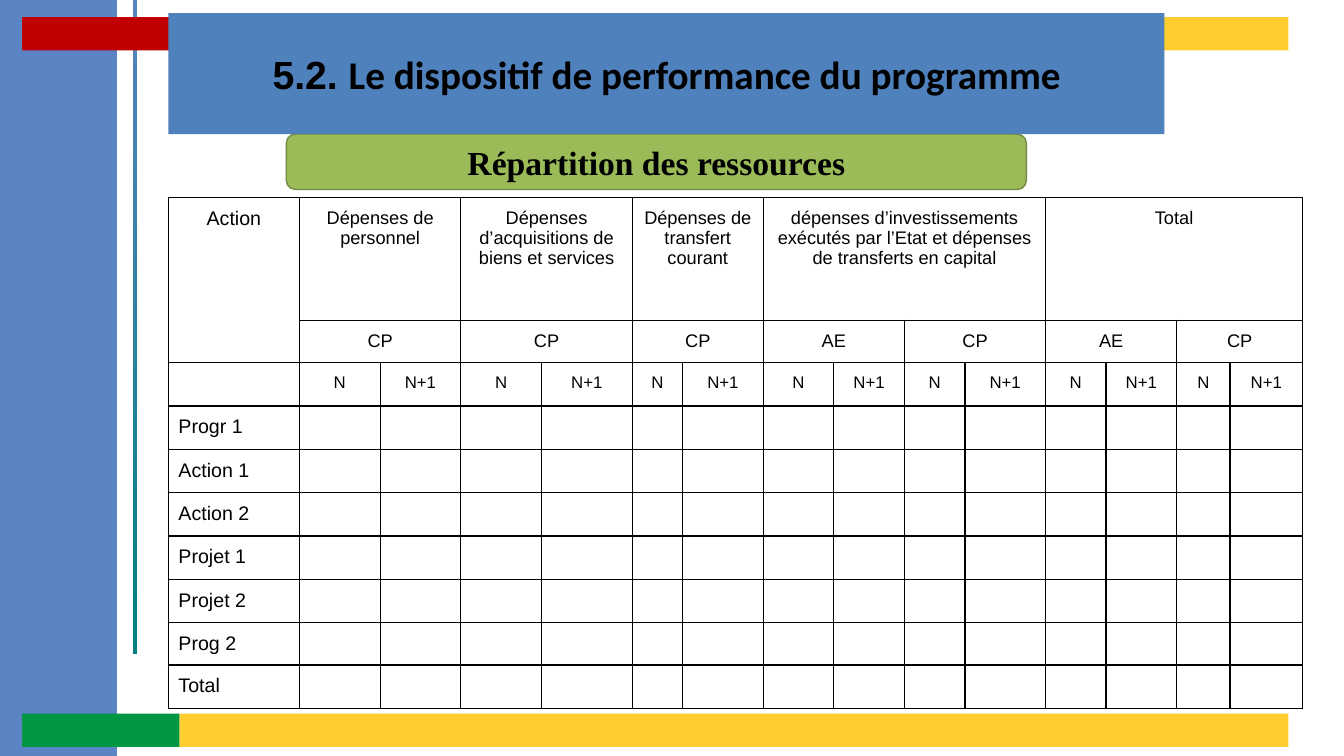
from lxml import etree
from pptx import Presentation
from pptx.dml.color import RGBColor
from pptx.enum.shapes import MSO_SHAPE
from pptx.enum.text import MSO_ANCHOR, PP_ALIGN
from pptx.oxml.ns import qn
from pptx.util import Inches, Pt

RECT, ROUNDED = MSO_SHAPE.RECTANGLE, MSO_SHAPE.ROUNDED_RECTANGLE
MIDDLE, TOP = MSO_ANCHOR.MIDDLE, MSO_ANCHOR.TOP
CENTER, LEFT = PP_ALIGN.CENTER, PP_ALIGN.LEFT

BLACK = RGBColor(0x00, 0x00, 0x00)
WHITE = RGBColor(0xFF, 0xFF, 0xFF)
SIDE_BLUE = RGBColor(0x5A, 0x84, 0xC3)
TITLE_BLUE = RGBColor(0x4F, 0x81, 0xBD)
TEAL = RGBColor(0x00, 0x80, 0x80)
YELLOW = RGBColor(0xFF, 0xCD, 0x2F)
GREEN = RGBColor(0x00, 0x96, 0x44)
RED = RGBColor(0xC0, 0x00, 0x00)
OLIVE = RGBColor(0x9B, 0xBB, 0x59)
OLIVE_DARK = RGBColor(0x73, 0x8A, 0x42)

COLUMNS = [1.3, 0.8, 0.8, 0.8, 0.9, 0.5, 0.8, 0.7, 0.7, 0.6, 0.8, 0.6, 0.7, 0.53, 0.72]
ROWS = [1.22, 0.4] + [0.43] * 6 + [0.41, 0.43]
# Heading and the credit types below it; each type covers the years N and N+1
GROUPS = [
    ("Dépenses de personnel", ["CP"]),
    ("Dépenses d’acquisitions de biens et services", ["CP"]),
    ("Dépenses de transfert courant", ["CP"]),
    ("dépenses d’investissements exécutés par l’Etat et dépenses "
     "de transferts en capital", ["AE", "CP"]),
    ("Total", ["AE", "CP"]),
]
LINES = ["Progr 1", "Action 1", "Action 2", "Projet 1", "Projet 2", "Prog 2", "Total"]


def add_text(p, text, font="Arial", size=14, bold=False, align=CENTER):
    p.alignment = align
    r = p.add_run()
    r.text = text
    r.font.name, r.font.size, r.font.bold = font, Pt(size), bold
    r.font.color.rgb = BLACK


class SlideBuilder:
    border_width = Pt(1)
    cell_inset = Inches(0.1)

    def __init__(self, prs):
        self.slide = prs.slides.add_slide(prs.slide_layouts[5])

    def place(self, sp, left, top, width, height):
        sp.left, sp.top = Inches(left), Inches(top)
        sp.width, sp.height = Inches(width), Inches(height)

    def shape(self, left, top, width, height, fill, kind=RECT, line=None):
        sp = self.slide.shapes.add_shape(
            kind, Inches(left), Inches(top), Inches(width), Inches(height))
        sp.shadow.inherit = False
        sp.fill.solid()
        sp.fill.fore_color.rgb = fill
        if line is None:
            sp.line.fill.background()
        else:
            sp.line.color.rgb = line
            sp.line.width = Pt(1)
        return sp

    def gradient_bar(self, left, top, width, height, start, end):
        sp = self.shape(left, top, width, height, start)
        sp.fill.gradient()
        sp.fill.gradient_angle = 270
        for stop, color in zip(sp.fill.gradient_stops, (start, end)):
            stop.color.rgb = color

    def title(self, left, top, width, height, parts):
        sp = self.slide.shapes.title
        self.place(sp, left, top, width, height)
        self.slide.shapes.element.append(sp.element)  # bring to front
        sp.fill.solid()
        sp.fill.fore_color.rgb = TITLE_BLUE
        tf = sp.text_frame
        tf.vertical_anchor = MIDDLE
        for text, font in parts:
            add_text(tf.paragraphs[0], text, font=font, size=28, bold=True)

    def table(self, left, top, columns, rows):
        frame = self.slide.shapes.add_table(
            len(rows), len(columns), Inches(left), Inches(top),
            Inches(sum(columns)), Inches(sum(rows)))
        table = frame.table
        table.first_row = table.horz_banding = False
        for column, width in zip(table.columns, columns):
            column.width = Inches(width)
        for row, height in zip(table.rows, rows):
            row.height = Inches(height)
        for cell in table.iter_cells():
            cell.margin_top = cell.margin_bottom = 0
            cell.fill.background()
            self.borders(cell)
        return table

    def borders(self, cell):
        tc_pr = cell._tc.get_or_add_tcPr()
        for i, side in enumerate(("a:lnL", "a:lnR", "a:lnT", "a:lnB")):
            ln = etree.Element(qn(side), w=str(self.border_width))
            fill = etree.SubElement(ln, qn("a:solidFill"))
            etree.SubElement(fill, qn("a:srgbClr"), val=str(BLACK))
            tc_pr.insert(i, ln)

    def cell(self, table, row, col, text, row_span=1, col_span=1, **style):
        cell = table.cell(row, col)
        if row_span * col_span > 1:
            cell.merge(table.cell(row + row_span - 1, col + col_span - 1))
        cell.margin_left = cell.margin_right = self.cell_inset
        cell.margin_top = cell.margin_bottom = self.cell_inset
        cell.vertical_anchor = TOP
        add_text(cell.text_frame.paragraphs[0], text, **style)
        return cell


def main():
    prs = Presentation()
    prs.slide_width, prs.slide_height = Inches(13.33), Inches(7.5)
    s = SlideBuilder(prs)

    # Side band and coloured bars
    s.shape(-0.11, -0.15, 1.27, 7.85, SIDE_BLUE)
    s.gradient_bar(1.32, -0.27, 0.04, 6.76, SIDE_BLUE, TEAL)
    for left, top, width, color in [
        (1.78, 7.08, 11, YELLOW), (0.22, 7.08, 1.56, GREEN),
        (0.22, 0.17, 9.56, RED), (9.78, 0.17, 3, YELLOW),
    ]:
        s.shape(left, top, width, 0.33, color)

    # Subtitle and title
    sp = s.shape(2.84, 1.33, 7.34, 0.55, OLIVE, kind=ROUNDED, line=OLIVE_DARK)
    sp.text_frame.vertical_anchor = MIDDLE
    add_text(sp.text_frame.paragraphs[0], "Répartition des ressources",
             font="Times New Roman", size=24, bold=True)
    s.title(1.67, 0.13, 9.88, 1.2, [
        ("5.2. ", "Arial"), ("Le dispositif de performance du programme", "Calibri")])

    # Table headings
    table = s.table(1.67, 1.96, COLUMNS, ROWS)
    s.cell(table, 0, 0, "Action", row_span=2)
    col = 1
    for heading, credits in GROUPS:
        cell = s.cell(table, 0, col, heading, col_span=2 * len(credits), size=13)
        if col >= 5:
            cell.fill.solid()
            cell.fill.fore_color.rgb = WHITE
        for credit in credits:
            s.cell(table, 1, col, credit, col_span=2, size=13)
            for i, year in enumerate(("N", "N+1")):
                s.cell(table, 2, col + i, year, size=12)
            col += 2

    # Table lines
    for row, label in enumerate(LINES, start=3):
        s.cell(table, row, 0, label, align=LEFT)

    prs.save("out.pptx")


if __name__ == "__main__":
    main()
